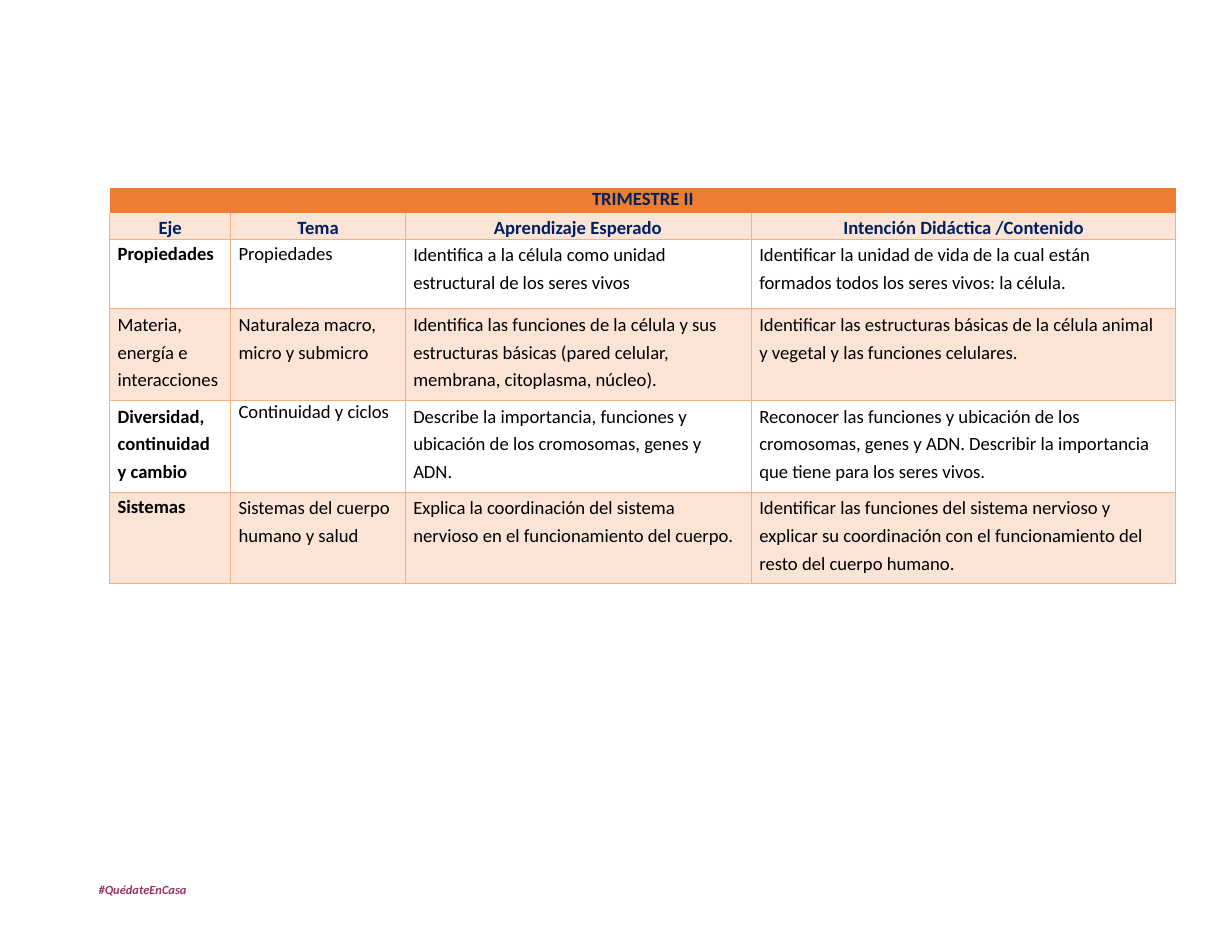
from lxml import etree
from pptx import Presentation
from pptx.dml.color import RGBColor
from pptx.enum import text
from pptx.oxml import ns
from pptx.util import Inches, Pt

HUES = {"title": "ED7D31", "band": "FBE4D5", "edge": "F4B083",
        "navy": "002060", "ink": "000000", "plum": "993366"}
FACE = "Calibri"
PLAIN = "{2D5ABB26-0587-4C30-8999-92F81FD0307C}"  # table style without grid

COLS = [1.08, 1.56, 3.09, 3.79]
ROWS = [0.22, 0.21, 0.62, 0.82, 0.82, 0.82]

# Heading, left indent (None means centred)
HEADS = [("Eje", None), ("Tema", None), ("Aprendizaje Esperado", 0.79),
         ("Intención Didáctica /Contenido", 0.82)]

BODY = [
    ["Propiedades", "Propiedades",
     "Identifica a la célula como unidad\nestructural de los seres vivos",
     "Identificar la unidad de vida de la cual están\n"
     "formados todos los seres vivos: la célula."],
    ["Materia,\nenergía e\ninteracciones", "Naturaleza macro,\nmicro y submicro",
     "Identifica las funciones de la célula y sus\n"
     "estructuras básicas (pared celular,\nmembrana, citoplasma, núcleo).",
     "Identificar las estructuras básicas de la célula animal\n"
     "y vegetal y las funciones celulares."],
    ["Diversidad,\ncontinuidad\ny cambio", "Continuidad y ciclos",
     "Describe la importancia, funciones y\n"
     "ubicación de los cromosomas, genes y\nADN.",
     "Reconocer las funciones y ubicación de los\n"
     "cromosomas, genes y ADN. Describir la importancia\n"
     "que tiene para los seres vivos."],
    ["Sistemas", "Sistemas del cuerpo\nhumano y salud",
     "Explica la coordinación del sistema\n"
     "nervioso en el funcionamiento del cuerpo.",
     "Identificar las funciones del sistema nervioso y\n"
     "explicar su coordinación con el funcionamiento del\n"
     "resto del cuerpo humano."],
]
BOLD = {"Propiedades", "Diversidad,\ncontinuidad\ny cambio", "Sistemas"}
LEAD = {"Propiedades": 1.18, "Sistemas": 1.18, "Continuidad y ciclos": 1.0}


def write(para, words, size, hue, bold=False, slant=False,
          indent=None, lead=None, align=None):
    """Fill a paragraph, one run for each line."""
    if indent:
        props = para._p.get_or_add_pPr()
        props.set("marL", str(Inches(indent)))
        props.set("indent", "0")
    para.alignment = align
    para.line_spacing = lead
    for i, line in enumerate(words.split("\n")):
        if i:
            para.add_line_break()
        run = para.add_run()
        run.text = line
        font = run.font
        font.name, font.size, font.bold, font.italic = FACE, Pt(size), bold, slant
        font.color.rgb = RGBColor.from_string(HUES[hue])


def dress(cell, fill, sides):
    """Set the margins, fill and edges of a cell."""
    cell.margin_left = cell.margin_right = 0
    cell.margin_top = cell.margin_bottom = 0
    if fill:
        cell.fill.solid()
        cell.fill.fore_color.rgb = RGBColor.from_string(HUES[fill])
    else:
        cell.fill.background()
    props = cell._tc.get_or_add_tcPr()
    for i, side in enumerate(sides):
        line = etree.Element(ns.qn("a:ln" + side), w=str(Pt(0.75)))
        paint = etree.SubElement(line, ns.qn("a:solidFill"))
        etree.SubElement(paint, ns.qn("a:srgbClr"), val=HUES["edge"])
        props.insert(i, line)


def add_plan(slide, left, top):
    """Table of the term's topics."""
    frame = slide.shapes.add_table(len(ROWS), len(COLS), Inches(left), Inches(top),
                                   Inches(sum(COLS)), Inches(sum(ROWS)))
    grid = frame.table
    grid._tbl.tblPr.find(ns.qn("a:tableStyleId")).text = PLAIN
    grid.first_row = grid.horz_banding = False
    for col, wide in zip(grid.columns, COLS):
        col.width = Inches(wide)
    for row, high in zip(grid.rows, ROWS):
        row.height = Inches(high)

    # Title row
    head = grid.cell(0, 0)
    head.merge(grid.cell(0, len(COLS) - 1))
    dress(head, "title", "")
    write(head.text_frame.paragraphs[0], "TRIMESTRE II", 12, "navy", True,
          align=text.PP_ALIGN.CENTER)

    # Column headings
    for c, (words, indent) in enumerate(HEADS):
        cell = grid.cell(1, c)
        dress(cell, "band", "LRB")
        write(cell.text_frame.paragraphs[0], words, 12, "navy", True,
              indent=indent, lead=1.16,
              align=None if indent else text.PP_ALIGN.CENTER)

    # Topic rows, every second one tinted
    for r, row in enumerate(BODY):
        for c, words in enumerate(row):
            cell = grid.cell(r + 2, c)
            dress(cell, "band" if r % 2 else None, "LRTB")
            write(cell.text_frame.paragraphs[0], words, 12, "ink",
                  c == 0 and words in BOLD, indent=0.07,
                  lead=LEAD.get(words, 1.22))


def add_tag(slide, left, top, wide, high):
    """Hashtag at the foot."""
    box = slide.shapes.add_textbox(Inches(left), Inches(top), Inches(wide), Inches(high))
    frame = box.text_frame
    frame.word_wrap = True
    frame.margin_left = frame.margin_right = frame.margin_bottom = 0
    frame.margin_top = Inches(0.01)
    write(frame.paragraphs[0], "#QuédateEnCasa", 8, "plum", True, True, indent=0.01)


def main():
    deck = Presentation()
    deck.slide_width, deck.slide_height = Inches(11), Inches(8.5)
    slide = deck.slides.add_slide(deck.slide_layouts[6])
    add_plan(slide, 0.98, 1.68)
    add_tag(slide, 0.87, 7.87, 0.81, 0.16)
    deck.save("out.pptx")


if __name__ == "__main__":
    main()
